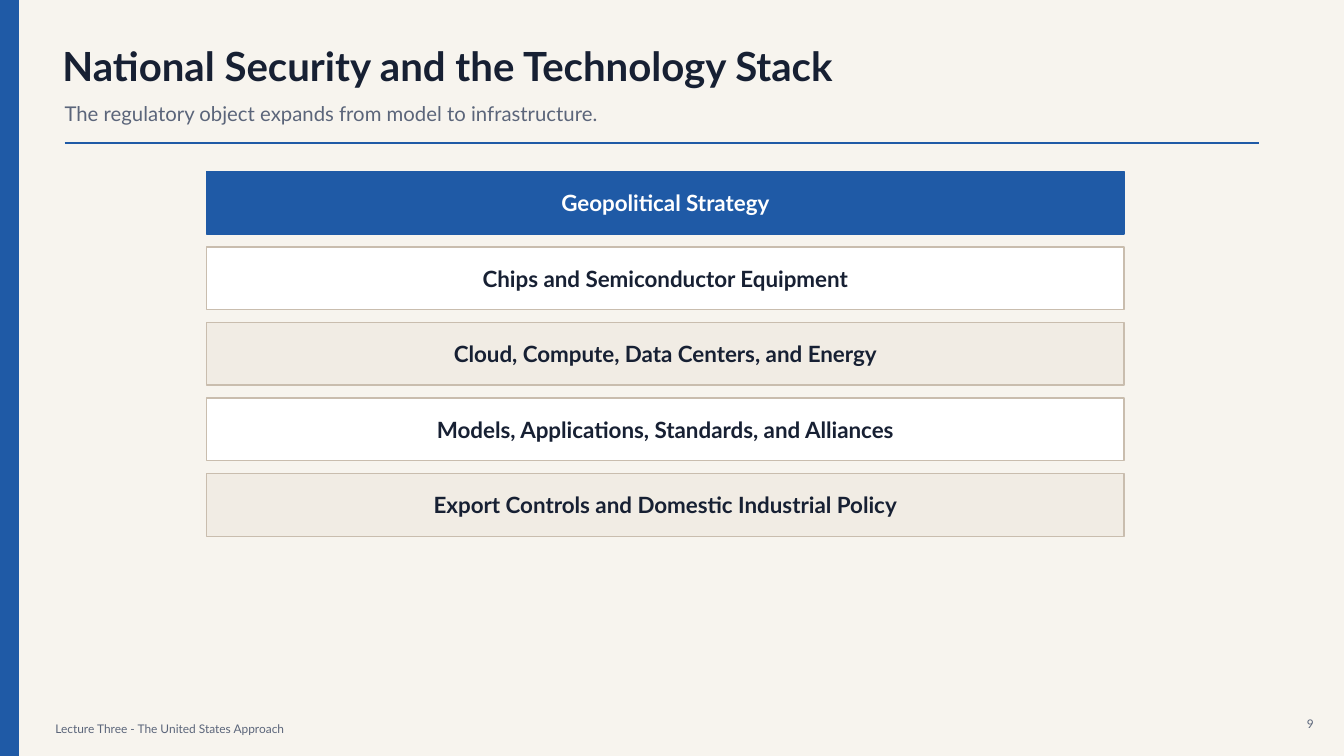
from pptx import Presentation
from pptx.dml.color import RGBColor
from pptx.enum.shapes import MSO_CONNECTOR, MSO_SHAPE
from pptx.enum.text import MSO_ANCHOR, PP_ALIGN
from pptx.oxml.ns import qn
from pptx.util import Inches, Pt
from lxml.etree import SubElement

CREAM = RGBColor(0xF7, 0xF4, 0xEE)
BLUE = RGBColor(0x1F, 0x5A, 0xA6)
INK = RGBColor(0x17, 0x20, 0x33)
SLATE = RGBColor(0x5B, 0x65, 0x7A)
WHITE = RGBColor(0xFF, 0xFF, 0xFF)
SAND = RGBColor(0xF1, 0xEC, 0xE4)
TAUPE = RGBColor(0xC9, 0xBD, 0xAE)

LAYER_TOP = 1.7
LAYER_PITCH = 0.75
LAYERS = [
    ("Geopolitical Strategy", BLUE, BLUE, WHITE),
    ("Chips and Semiconductor Equipment", WHITE, TAUPE, INK),
    ("Cloud, Compute, Data Centers, and Energy", SAND, TAUPE, INK),
    ("Models, Applications, Standards, and Alliances", WHITE, TAUPE, INK),
    ("Export Controls and Domestic Industrial Policy", SAND, TAUPE, INK),
]


def write(frame, words, size, color, bold=False, align=PP_ALIGN.LEFT):
    """Fill a text frame with one styled, vertically centred paragraph."""
    frame.word_wrap = True
    frame.vertical_anchor = MSO_ANCHOR.MIDDLE
    frame.margin_left = frame.margin_right = Inches(0)
    frame.margin_top = frame.margin_bottom = Inches(0)
    paragraph = frame.paragraphs[0]
    paragraph.text = words
    paragraph.alignment = align
    font = paragraph.runs[0].font
    font.name = "Lato"
    font.size = Pt(size)
    font.bold = bold
    font.color.rgb = color


def add_label(slide, bounds, words, size, color, **style):
    """Add a text box at the given bounds in inches."""
    label = slide.shapes.add_textbox(*map(Inches, bounds))
    write(label.text_frame, words, size, color, **style)


def add_block(slide, bounds, fill, outline):
    """Add a flat outlined rectangle and return it."""
    block = slide.shapes.add_shape(MSO_SHAPE.RECTANGLE, *map(Inches, bounds))
    block.shadow.inherit = False
    block.fill.solid()
    block.fill.fore_color.rgb = fill
    block.line.color.rgb = outline
    block.line.width = Pt(1)
    return block


def add_rule(slide, left, right, y):
    """Add the horizontal rule below the heading."""
    rule = slide.shapes.add_connector(
        MSO_CONNECTOR.STRAIGHT, Inches(left), Inches(y), Inches(right), Inches(y))
    rule.line.color.rgb = BLUE
    rule.line.width = Pt(1.25)
    SubElement(rule._element.spPr, qn("a:effectLst"))


def main():
    """Build the technology stack slide and save it."""
    deck = Presentation()
    deck.slide_width = Inches(13.33)
    deck.slide_height = Inches(7.5)
    slide = deck.slides.add_slide(deck.slide_layouts[6])
    slide.background.fill.solid()
    slide.background.fill.fore_color.rgb = CREAM

    add_block(slide, (0, 0, 0.18, 7.5), BLUE, BLUE)
    add_label(slide, (0.55, 7.13, 9, 0.2),
              "Lecture Three - The United States Approach", 8.5, SLATE)
    add_label(slide, (12.75, 7.08, 0.28, 0.2), "9", 8.5, SLATE, align=PP_ALIGN.RIGHT)
    add_label(slide, (0.62, 0.42, 9.8, 0.45),
              "National Security and the Technology Stack", 28.7, INK, bold=True)
    add_label(slide, (0.64, 0.95, 10.9, 0.35),
              "The regulatory object expands from model to infrastructure.", 14.5, SLATE)
    add_rule(slide, 0.64, 12.49, 1.42)

    for level, (words, fill, outline, ink) in enumerate(LAYERS):
        top = LAYER_TOP + level * LAYER_PITCH
        layer = add_block(slide, (2.05, top, 9.1, 0.62), fill, outline)
        write(layer.text_frame, words, 16, ink, bold=True, align=PP_ALIGN.CENTER)

    deck.save("out.pptx")


if __name__ == "__main__":
    main()
